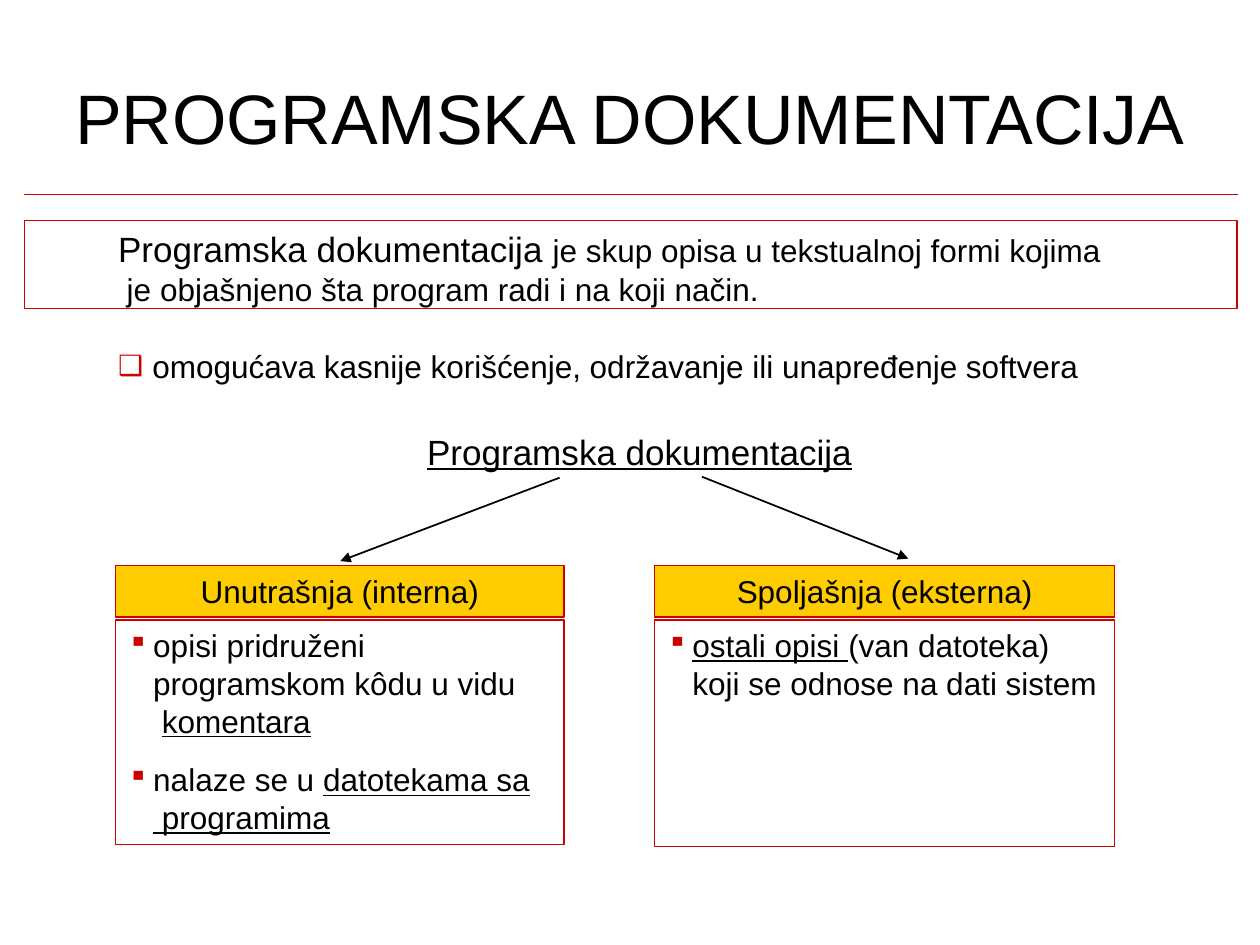
from dataclasses import dataclass
from typing import NamedTuple

from lxml import etree
from pptx import Presentation
from pptx.dml.color import RGBColor
from pptx.enum.shapes import MSO_CONNECTOR, MSO_SHAPE
from pptx.enum.text import MSO_ANCHOR, MSO_AUTO_SIZE, PP_ALIGN
from pptx.oxml.ns import qn
from pptx.util import Cm, Pt

RECT = MSO_SHAPE.RECTANGLE
STRAIGHT = MSO_CONNECTOR.STRAIGHT
TOP, MIDDLE = MSO_ANCHOR.TOP, MSO_ANCHOR.MIDDLE
LEFT, CENTER = PP_ALIGN.LEFT, PP_ALIGN.CENTER
FIXED = MSO_AUTO_SIZE.NONE

FONT = "Arial"
COLORS = {"ink": "000000", "red": "CC0000", "gold": "FFCC00"}


class Box(NamedTuple):
    left: float
    top: float
    width: float
    height: float


class Span(NamedTuple):
    text: str
    size: float = 18
    under: bool = False


@dataclass
class Para:
    spans: list[Span]
    mark: str = ""
    indent: float = 0
    hang: float = 0
    before: float = 0
    align: PP_ALIGN = LEFT


@dataclass
class Card:
    left: float
    width: float
    height: float
    title: str
    items: list[Para]


class Arrow(NamedTuple):
    x1: float
    y1: float
    x2: float
    y2: float


def color(name: str) -> RGBColor:
    return RGBColor.from_string(COLORS[name])


def add_mark(props, mark: str) -> None:
    if not mark:
        etree.SubElement(props, qn("a:buNone"))
        return
    tint = etree.SubElement(props, qn("a:buClr"))
    etree.SubElement(tint, qn("a:srgbClr"), val=COLORS["red"])
    etree.SubElement(props, qn("a:buSzPct"), val="89000")
    etree.SubElement(props, qn("a:buChar"), char=mark)


def write(shape, paras: list[Para], anchor=TOP, left=0.0, top=0.0) -> None:
    frame = shape.text_frame
    frame.auto_size = FIXED
    frame.word_wrap = True
    frame.vertical_anchor = anchor
    frame.margin_left, frame.margin_top = Cm(left), Cm(top)
    frame.margin_right = frame.margin_bottom = 0
    for index, item in enumerate(paras):
        para = frame.add_paragraph() if index else frame.paragraphs[0]
        para.alignment = item.align
        para.space_before = Pt(item.before)
        para.line_spacing = 1.0
        props = para._p.get_or_add_pPr()
        props.set("marL", str(Cm(item.indent)))
        props.set("indent", str(Cm(-item.hang)))
        add_mark(props, item.mark)
        for span in item.spans:
            for row, text in enumerate(span.text.split("\v")):
                if row:
                    para.add_line_break()
                if not text:
                    continue
                run = para.add_run()
                run.text = text
                run.font.name = FONT
                run.font.size = Pt(span.size)
                run.font.underline = span.under
                run.font.color.rgb = color("ink")


def place(shape, box: Box) -> None:
    shape.left, shape.top, shape.width, shape.height = map(Cm, box)


def add_box(slide, box: Box, fill: str = ""):
    shape = slide.shapes.add_shape(RECT, *map(Cm, box))
    shape.shadow.inherit = False
    if fill:
        shape.fill.solid()
        shape.fill.fore_color.rgb = color(fill)
    else:
        shape.fill.background()
    shape.line.color.rgb = color("red")
    shape.line.width = Pt(0.72)
    return shape


def add_line(slide, ends: Arrow, tint: str, head: bool = False) -> None:
    line = slide.shapes.add_connector(STRAIGHT, *map(Cm, ends))
    line.line.color.rgb = color(tint)
    line.line.width = Pt(1)
    if head:
        etree.SubElement(line.line._get_or_add_ln(), qn("a:tailEnd"), type="triangle")
    etree.SubElement(line._element.spPr, qn("a:effectLst"))


def add_card(slide, card: Card) -> None:
    head = add_box(slide, Box(card.left, 11.4, card.width, 1.04), "gold")
    write(head, [Para([Span(card.title)], align=CENTER)], MIDDLE)
    body = add_box(slide, Box(card.left, 12.5, card.width, card.height))
    write(body, card.items, left=0.23, top=0.12)


def point(*spans: Span, before: float = 0) -> Para:
    return Para(list(spans), "▪", 0.53, 0.51, before)


CARDS = [
    Card(2.33, 9.04, 4.52, "Unutrašnja (interna)", [
        point(Span("opisi pridruženi \vprogramskom kôdu u vidu \v "),
              Span("komentara", under=True)),
        point(Span("nalaze se u "),
              Span("datotekama sa\v programima", under=True), before=12),
    ]),
    Card(13.2, 9.27, 4.56, "Spoljašnja (eksterna)", [
        point(Span("ostali opisi ", under=True),
              Span("(van datoteka) \vkoji se odnose na dati sistem")),
    ]),
]
ARROWS = [Arrow(11.28, 9.63, 6.86, 11.31), Arrow(14.15, 9.61, 18.31, 11.26)]


def main() -> None:
    deck = Presentation()
    deck.slide_width, deck.slide_height = Cm(25.4), Cm(19.05)
    slide = deck.slides.add_slide(deck.slide_layouts[1])
    title, body = slide.placeholders

    place(title, Box(1.27, 1.5, 22.86, 1.7))
    write(title, [Para([Span("PROGRAMSKA DOKUMENTACIJA", 40)], align=CENTER)], MIDDLE)
    add_line(slide, Arrow(0.48, 3.92, 24.95, 3.92), "red")

    claim = add_box(slide, Box(0.5, 4.44, 24.44, 1.78))
    write(claim, [Para([
        Span("Programska dokumentacija ", 20),
        Span("je skup opisa u tekstualnoj formi kojima\v"
             " je objašnjeno šta program radi i na koji način."),
    ], indent=1.88)], top=0.15)

    place(body, Box(2.36, 6.99, 19.6, 2.49))
    write(body, [
        Para([Span("omogućava kasnije korišćenje, održavanje ili unapređenje softvera")],
             "❑", 0.71, 0.69),
        Para([Span("Programska dokumentacija", 20, True)], indent=6.25, before=26),
    ])

    for card in CARDS:
        add_card(slide, card)
    for arrow in ARROWS:
        add_line(slide, arrow, "ink", True)
    deck.save("out.pptx")


if __name__ == "__main__":
    main()
